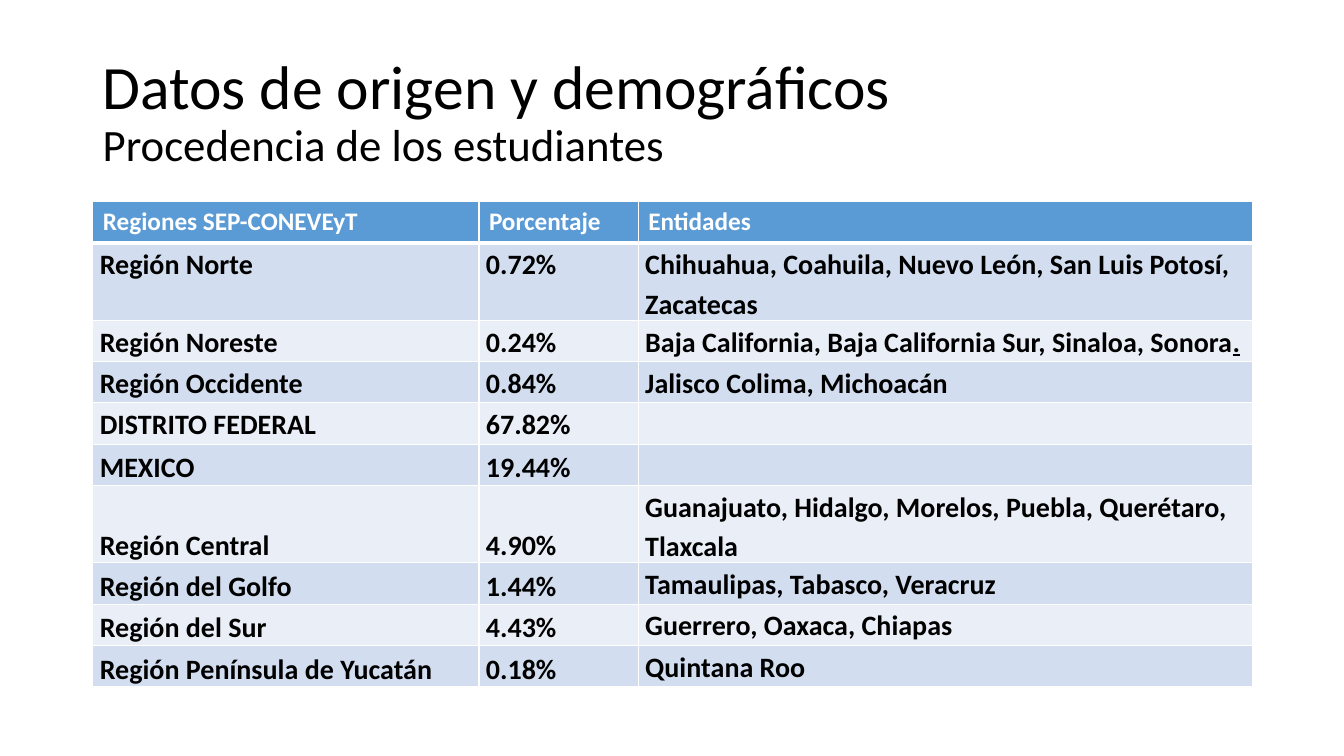
from pptx import Presentation
from pptx.dml.color import RGBColor
from pptx.enum.text import MSO_ANCHOR, PP_ALIGN
from pptx.oxml.ns import qn
from pptx.util import Inches, Pt
from lxml import etree

MIDDLE, BOTTOM, TOP = MSO_ANCHOR.MIDDLE, MSO_ANCHOR.BOTTOM, MSO_ANCHOR.TOP
JUSTIFY, LEFT = PP_ALIGN.JUSTIFY, PP_ALIGN.LEFT

HEADS = ["Regiones SEP-CONEVEyT", "Porcentaje", "Entidades"]
REGIONS = [
    ("Región Norte", "0.72%", "Chihuahua, Coahuila, Nuevo León, San Luis Potosí, Zacatecas"),
    ("Región Noreste", "0.24%", "Baja California, Baja California Sur, Sinaloa, Sonora."),
    ("Región Occidente", "0.84%", "Jalisco Colima, Michoacán"),
    ("DISTRITO FEDERAL", "67.82%", ""),
    ("MEXICO", "19.44%", ""),
    ("Región Central", "4.90%", "Guanajuato, Hidalgo, Morelos, Puebla, Querétaro, Tlaxcala"),
    ("Región del Golfo", "1.44%", "Tamaulipas, Tabasco, Veracruz"),
    ("Región del Sur", "4.43%", "Guerrero, Oaxaca, Chiapas"),
    ("Región Península de Yucatán", "0.18%", "Quintana Roo"),
]
WIDTHS = [3.83, 1.58, 6.09]
ROW = 0.41
LOW_FROM = 5  # first row whose region and share sit at the cell bottom


def color(code):
    return RGBColor.from_string(code)


def apply(item, values):
    for name, value in values.items():
        setattr(item, name, value)


class Deck:
    font = "Calibri"
    ink, white = "000000", "FFFFFF"
    head, bands = "5B9BD5", ("EAEFF7", "D2DEEF")

    def __init__(self, slide):
        self.slide = slide

    def run(self, para, text, size, tone, **extra):
        run = para.add_run()
        run.text = text
        apply(run.font, {"name": self.font, "size": Pt(size), **extra})
        run.font.color.rgb = color(tone)

    def title(self, box, main, sub):
        frame = self.slide.shapes.add_textbox(*map(Inches, box)).text_frame
        apply(frame, {"word_wrap": True, "vertical_anchor": MIDDLE})
        para = frame.paragraphs[0]
        para.line_spacing = 0.9
        self.run(para, main, 44, self.ink)
        para.add_line_break()
        self.run(para, sub, 32, self.ink)

    def edge(self, cell, side, width):
        props = cell._tc.get_or_add_tcPr()
        line = etree.SubElement(props, qn("a:ln" + side), w=str(Pt(width)))
        fill = etree.SubElement(line, qn("a:solidFill"))
        etree.SubElement(fill, qn("a:srgbClr"), val=self.white)

    def cell(self, cell, row, col, text):
        """Borders come before the fill, as the schema asks."""
        for side in "LRTB":
            thick = (row, side) in ((0, "B"), (1, "T"))
            self.edge(cell, side, 3 if thick else 1)
        cell.fill.solid()
        cell.fill.fore_color.rgb = color(self.bands[row % 2] if row else self.head)
        if not text:
            return
        para = cell.text_frame.paragraphs[0]
        if row == 0:
            self.run(para, text, 18, self.white, bold=True)
            return
        low = row >= LOW_FROM and col < 2
        side = Inches(0.07)
        apply(cell, {"margin_left": side, "margin_right": side,
                     "margin_top": 0, "margin_bottom": 0,
                     "vertical_anchor": BOTTOM if low else TOP})
        apply(para, {"line_spacing": 1.15,
                     "alignment": JUSTIFY if col == 1 else LEFT})
        body = text.removesuffix(".")
        self.run(para, body, 20, self.ink, bold=True)
        if body != text:
            self.run(para, ".", 20, self.ink, bold=True, underline=True)

    def table(self, left, top, widths, rows):
        box = left, top, sum(widths), ROW * len(rows)
        table = self.slide.shapes.add_table(
            len(rows), len(widths), *map(Inches, box)).table
        for col, width in zip(table.columns, widths):
            col.width = Inches(width)
        for i, texts in enumerate(rows):
            table.rows[i].height = Inches(ROW)
            for j, text in enumerate(texts):
                self.cell(table.cell(i, j), i, j, text)


def main():
    show = Presentation()
    apply(show, {"slide_width": Inches(13.33), "slide_height": Inches(7.5)})
    deck = Deck(show.slides.add_slide(show.slide_layouts[6]))
    deck.title((0.92, 0.4, 11.5, 1.45),
               "Datos de origen y demográficos", "Procedencia de los estudiantes")
    deck.table(0.92, 2, WIDTHS, [HEADS, *REGIONS])
    show.save("out.pptx")


if __name__ == "__main__":
    main()
